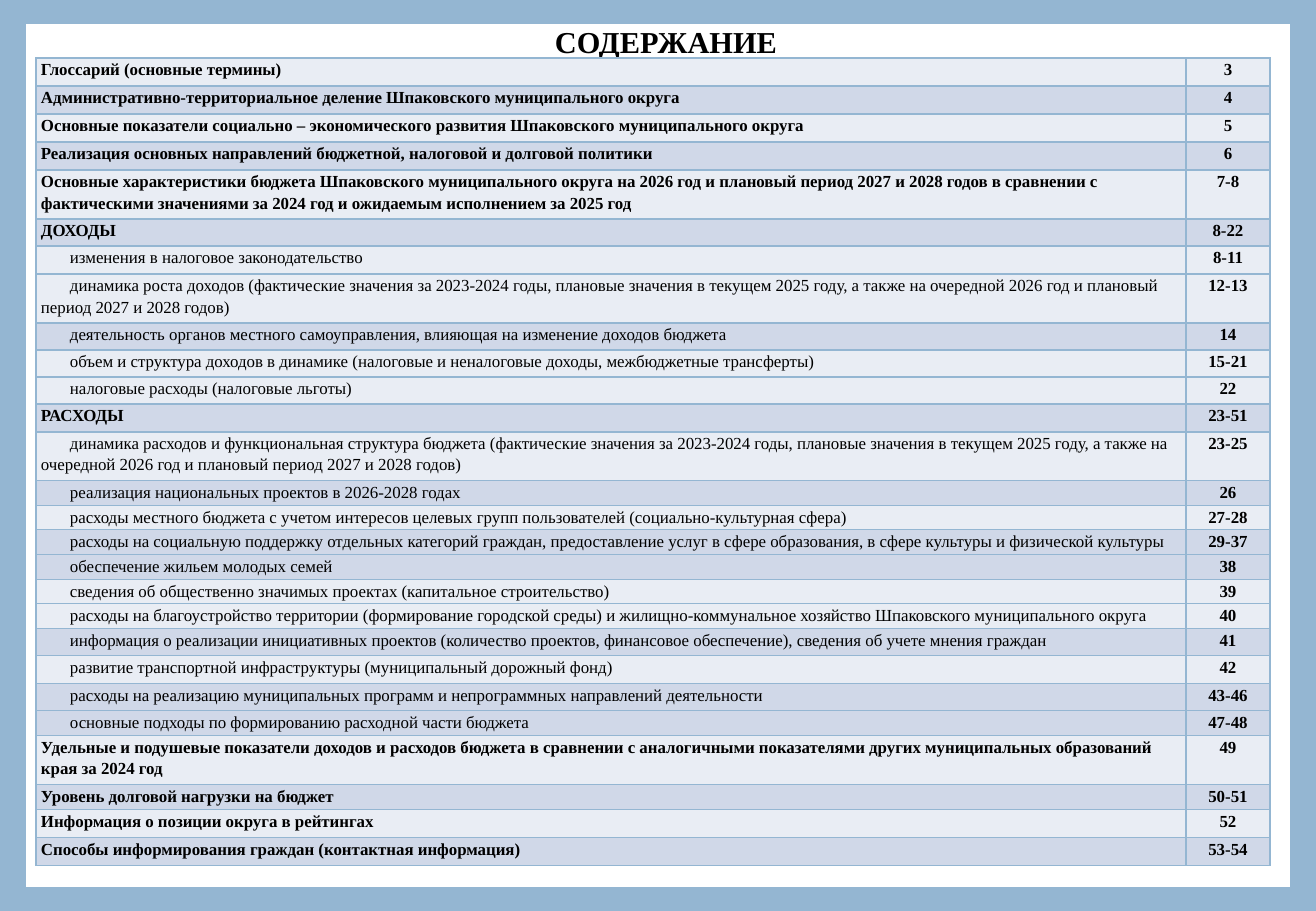
import pptx
import pptx.util
import pptx.dml.color
import pptx.enum.shapes
import pptx.enum.text
import pptx.oxml
import pptx.oxml.ns

SCALE = 7526  # EMU per px
FONT = "Times New Roman"
COLORS = {"edge": "94B6D2", "page": "FFFFFF", "text": "000000",
          "light": "E9EDF4", "dark": "D0D8E8"}
ALIGN = pptx.enum.text.PP_ALIGN

# Row height, tone, is a heading, text, pages
ROWS = [
    (28, "light", True, "Глоссарий (основные термины)", "3"),
    (28, "dark", True, "Административно-территориальное деление Шпаковского муниципального округа", "4"),
    (28, "light", True, "Основные показатели социально – экономического развития "
     "Шпаковского муниципального округа", "5"),
    (28, "dark", True, "Реализация основных направлений бюджетной, налоговой и долговой политики", "6"),
    (49, "light", True, "Основные характеристики бюджета Шпаковского муниципального округа на 2026 год "
     "и плановый период 2027 и 2028 годов в сравнении с фактическими значениями за 2024 год "
     "и ожидаемым исполнением за 2025 год", "7-8"),
    (27, "dark", True, "ДОХОДЫ", "8-22"),
    (28, "light", False, "изменения в налоговое законодательство", "8-11"),
    (49, "light", False, "динамика роста доходов (фактические значения за 2023-2024 годы, плановые значения "
     "в текущем 2025 году, а также на очередной 2026 год и плановый период 2027 и 2028 годов)", "12-13"),
    (27, "dark", False, "деятельность органов местного самоуправления, влияющая на изменение "
     "доходов бюджета", "14"),
    (27, "light", False, "объем и структура доходов в динамике (налоговые и неналоговые доходы, "
     "межбюджетные трансферты)", "15-21"),
    (27, "light", False, "налоговые расходы (налоговые льготы)", "22"),
    (28, "dark", True, "РАСХОДЫ", "23-51"),
    (49, "light", False, "динамика расходов и функциональная структура бюджета (фактические значения "
     "за 2023-2024 годы, плановые значения в текущем 2025 году, а также на очередной 2026 год "
     "и плановый период 2027 и 2028 годов)", "23-25"),
    (25, "dark", False, "реализация национальных проектов в 2026-2028 годах", "26"),
    (24, "light", False, "расходы местного бюджета с учетом интересов целевых групп пользователей "
     "(социально-культурная сфера)", "27-28"),
    (25, "dark", False, "расходы на социальную поддержку отдельных категорий граждан, предоставление услуг "
     "в сфере образования, в сфере культуры и физической культуры", "29-37"),
    (25, "dark", False, "обеспечение жильем молодых семей", "38"),
    (24, "light", False, "сведения об общественно значимых проектах (капитальное строительство)", "39"),
    (25, "light", False, "расходы на благоустройство территории (формирование городской среды) "
     "и жилищно-коммунальное хозяйство Шпаковского муниципального округа", "40"),
    (27, "dark", False, "информация о реализации инициативных проектов (количество проектов, "
     "финансовое обеспечение), сведения об учете мнения граждан", "41"),
    (28, "light", False, "развитие транспортной инфраструктуры (муниципальный дорожный фонд)", "42"),
    (27, "dark", False, "расходы на реализацию муниципальных программ и непрограммных "
     "направлений деятельности", "43-46"),
    (25, "dark", False, "основные подходы по формированию расходной части бюджета", "47-48"),
    (49, "light", True, "Удельные и подушевые показатели доходов и расходов бюджета в сравнении "
     "с аналогичными показателями других муниципальных образований края за 2024 год", "49"),
    (25, "dark", True, "Уровень долговой нагрузки на бюджет", "50-51"),
    (28, "light", True, "Информация о позиции округа в рейтингах", "52"),
    (28, "dark", True, "Способы информирования граждан (контактная информация)", "53-54"),
]


def px(*sizes):
    return [pptx.util.Emu(size * SCALE) for size in sizes]


def tint(name):
    return pptx.dml.color.RGBColor.from_string(COLORS[name])


def write(frame, text, size=10, bold=True, align=ALIGN.LEFT, space=1.15, indent=0):
    frame.word_wrap = True
    par = frame.paragraphs[0]
    par.alignment = align
    par.line_spacing = space
    if indent:
        par._p.get_or_add_pPr().set("indent", str(indent * SCALE))
    run = par.add_run()
    run.text = text
    run.font.name = FONT
    run.font.size = pptx.util.Pt(size)
    run.font.bold = bold
    run.font.color.rgb = tint("text")


def border(cell):
    props = cell._tc.get_or_add_tcPr()
    for index, side in enumerate("LRTB"):
        props.insert(index, pptx.oxml.parse_xml(
            f'<a:ln{side} {pptx.oxml.ns.nsdecls("a")} w="12700"><a:solidFill>'
            f'<a:srgbClr val="{COLORS["edge"]}"/></a:solidFill></a:ln{side}>'))


def style(cell, tone):
    cell.margin_left, cell.margin_right, cell.margin_top, cell.margin_bottom = px(5, 5, 0, 0)
    cell.fill.solid()
    cell.fill.fore_color.rgb = tint(tone)
    border(cell)


def panel(slide, *box):
    shape = slide.shapes.add_shape(pptx.enum.shapes.MSO_SHAPE.RECTANGLE, *px(*box))
    shape.shadow.inherit = False
    shape.fill.solid()
    shape.fill.fore_color.rgb = tint("page")
    shape.line.fill.background()


def title(slide, text, *box):
    frame = slide.shapes.add_textbox(*px(*box)).text_frame
    frame.margin_left = frame.margin_right = frame.margin_top = frame.margin_bottom = 0
    frame.vertical_anchor = pptx.enum.text.MSO_ANCHOR.MIDDLE
    write(frame, text, size=18, align=ALIGN.CENTER, space=0.9)


def contents(slide, left, top, widths):
    height = sum(row[0] for row in ROWS)
    table = slide.shapes.add_table(
        len(ROWS), len(widths), *px(left, top, sum(widths), height)).table
    table.first_row = table.horz_banding = False
    for column, width in zip(table.columns, px(*widths)):
        column.width = width
    for line, (high, tone, head, text, pages) in zip(table.rows, ROWS):
        line.height = px(high)[0]
        topic, number = line.cells
        style(topic, tone)
        style(number, tone)
        write(topic.text_frame, text, bold=head, indent=0 if head else 29)
        write(number.text_frame, pages, align=ALIGN.CENTER)


def main():
    deck = pptx.Presentation()
    deck.slide_width, deck.slide_height = px(1316, 911)
    slide = deck.slides.add_slide(deck.slide_layouts[6])

    # Blue frame and white page
    slide.background.fill.solid()
    slide.background.fill.fore_color.rgb = tint("edge")
    panel(slide, 26, 24, 1264, 863)

    # Heading and table of contents
    title(slide, "СОДЕРЖАНИЕ", 543, 23, 246, 41)
    contents(slide, 36, 58, (1150, 84))
    deck.save("out.pptx")


if __name__ == "__main__":
    main()
